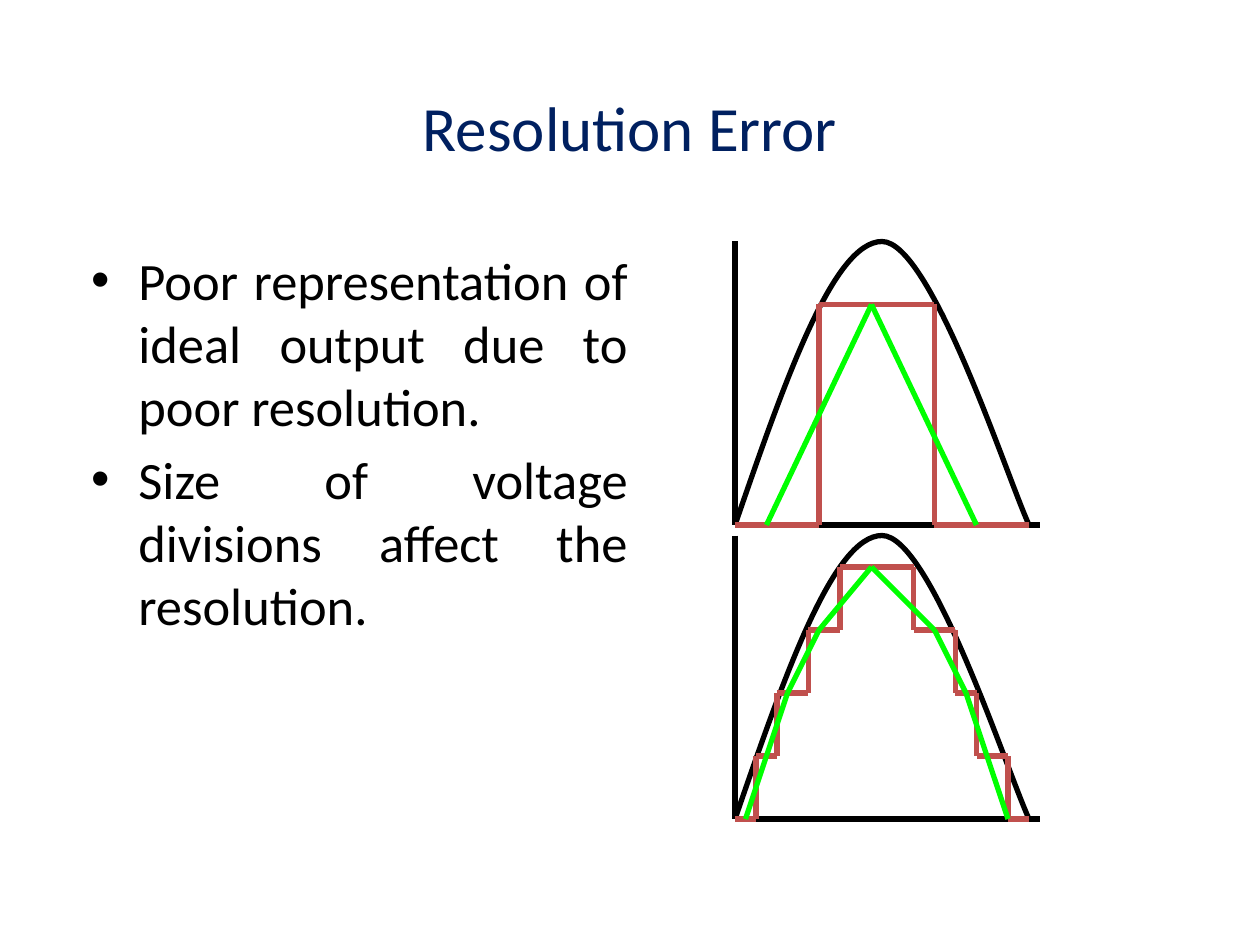
from itertools import pairwise

from lxml.etree import SubElement
from pptx import Presentation
from pptx.dml.color import RGBColor
from pptx.enum.shapes import MSO_CONNECTOR
from pptx.enum.text import MSO_ANCHOR, PP_ALIGN
from pptx.oxml.ns import qn
from pptx.util import Pt

TITLE = "Resolution Error"
BULLETS = [
    "Poor representation of ideal output due to poor resolution.",
    "Size of voltage divisions affect the resolution.",
]
COLORS = {"title": "002060", "text": "000000", "ideal": "000000",
          "steps": "C0504D", "output": "00FF00"}
FONT = "Calibri"

LEFT, AXIS_WIDTH, HEIGHT, CURVE_WIDTH = 420, 174, 162, 168
CURVE = [
    [(28, 81), (56, 0), (84, 0)],
    [(112, 0), (155.5, 135), (168, 162)],
]
PLOTS = [
    {
        "base": 300,
        "steps": [(0, 0), (48, 0), (48, 126), (114, 126), (114, 0), (168, 0)],
        "output": [(18, 0), (78, 126), (138, 0)],
    },
    {
        "base": 468,
        "steps": [(0, 0), (12, 0), (12, 36), (24, 36), (24, 72), (42, 72),
                  (42, 108), (60, 108), (60, 144), (102, 144), (102, 108),
                  (126, 108), (126, 72), (138, 72), (138, 36), (156, 36),
                  (156, 0), (168, 0)],
        "output": [(6, 0), (18, 36), (30, 72), (48, 108), (78, 144),
                   (114, 108), (132, 72), (144, 36), (156, 0)],
    },
]


def apply_format(target, values):
    for name, value in values.items():
        setattr(target, name, value)


def format_font(font, size, color):
    apply_format(font, {"name": FONT, "size": Pt(size), "bold": False})
    font.color.rgb = RGBColor.from_string(COLORS[color])


def format_line(shape, color):
    shape.line.width = Pt(3)
    shape.line.color.rgb = RGBColor.from_string(COLORS[color])


def add_polyline(shapes, points, base, color):
    for start, end in pairwise(points):
        ends = [Pt(value) for x, y in (start, end) for value in (LEFT + x, base - y)]
        connector = shapes.add_connector(MSO_CONNECTOR.STRAIGHT, *ends)
        format_line(connector, color)
        SubElement(connector._element.spPr, qn("a:effectLst"))


def add_curve(shapes, base):
    builder = shapes.build_freeform(0, HEIGHT, scale=Pt(1))
    builder.add_line_segments([segment[-1] for segment in CURVE], close=False)
    curve = builder.convert_to_shape(Pt(LEFT), Pt(base - HEIGHT))
    outline = curve._element.find(".//" + qn("a:path"))
    apply_scale = {"w": CURVE_WIDTH * 10, "h": HEIGHT * 10}
    for name, value in apply_scale.items():
        outline.set(name, str(value))
    start = outline.find(qn("a:moveTo")).find(qn("a:pt"))
    start.set("y", str(HEIGHT * 10))
    for straight, segment in zip(outline.findall(qn("a:lnTo")), CURVE):
        outline.remove(straight)
        bezier = SubElement(outline, qn("a:cubicBezTo"))
        for x, y in segment:
            SubElement(bezier, qn("a:pt"), x=str(int(x * 10)), y=str(int(y * 10)))
    curve.fill.background()
    curve.shadow.inherit = False
    format_line(curve, "ideal")


def add_title(slide):
    title = slide.shapes.title
    apply_format(title, {"left": Pt(45), "top": Pt(24),
                         "width": Pt(630), "height": Pt(96)})
    title.text_frame.vertical_anchor = MSO_ANCHOR.MIDDLE
    paragraph = title.text_frame.paragraphs[0]
    paragraph.text = TITLE
    paragraph.alignment = PP_ALIGN.CENTER
    format_font(paragraph.runs[0].font, 36, "title")


def add_bullets(slide):
    frame = slide.shapes.add_textbox(Pt(45), Pt(138), Pt(321), Pt(336)).text_frame
    frame.word_wrap = True
    for index, text in enumerate(BULLETS):
        paragraph = frame.add_paragraph() if index else frame.paragraphs[0]
        paragraph.text = text
        apply_format(paragraph, {"alignment": PP_ALIGN.JUSTIFY, "space_before": Pt(6)})
        format_font(paragraph.runs[0].font, 30, "text")
        properties = paragraph._p.get_or_add_pPr()
        properties.set("marL", str(Pt(27)))
        properties.set("indent", str(-Pt(27)))
        SubElement(properties, qn("a:buFont"), typeface="Arial")
        SubElement(properties, qn("a:buChar"), char="•")


def main():
    presentation = Presentation()
    apply_format(presentation, {"slide_width": Pt(720), "slide_height": Pt(540)})
    slide = presentation.slides.add_slide(presentation.slide_layouts[5])
    add_title(slide)
    add_bullets(slide)
    for plot in PLOTS:
        group = slide.shapes.add_group_shape()
        axes = [(0, HEIGHT), (0, 0), (AXIS_WIDTH, 0)]
        add_polyline(group.shapes, axes, plot["base"], "ideal")
        add_curve(group.shapes, plot["base"])
    for series in ("steps", "output"):
        for plot in PLOTS:
            add_polyline(slide.shapes, plot[series], plot["base"], series)
    presentation.save("out.pptx")


if __name__ == "__main__":
    main()
